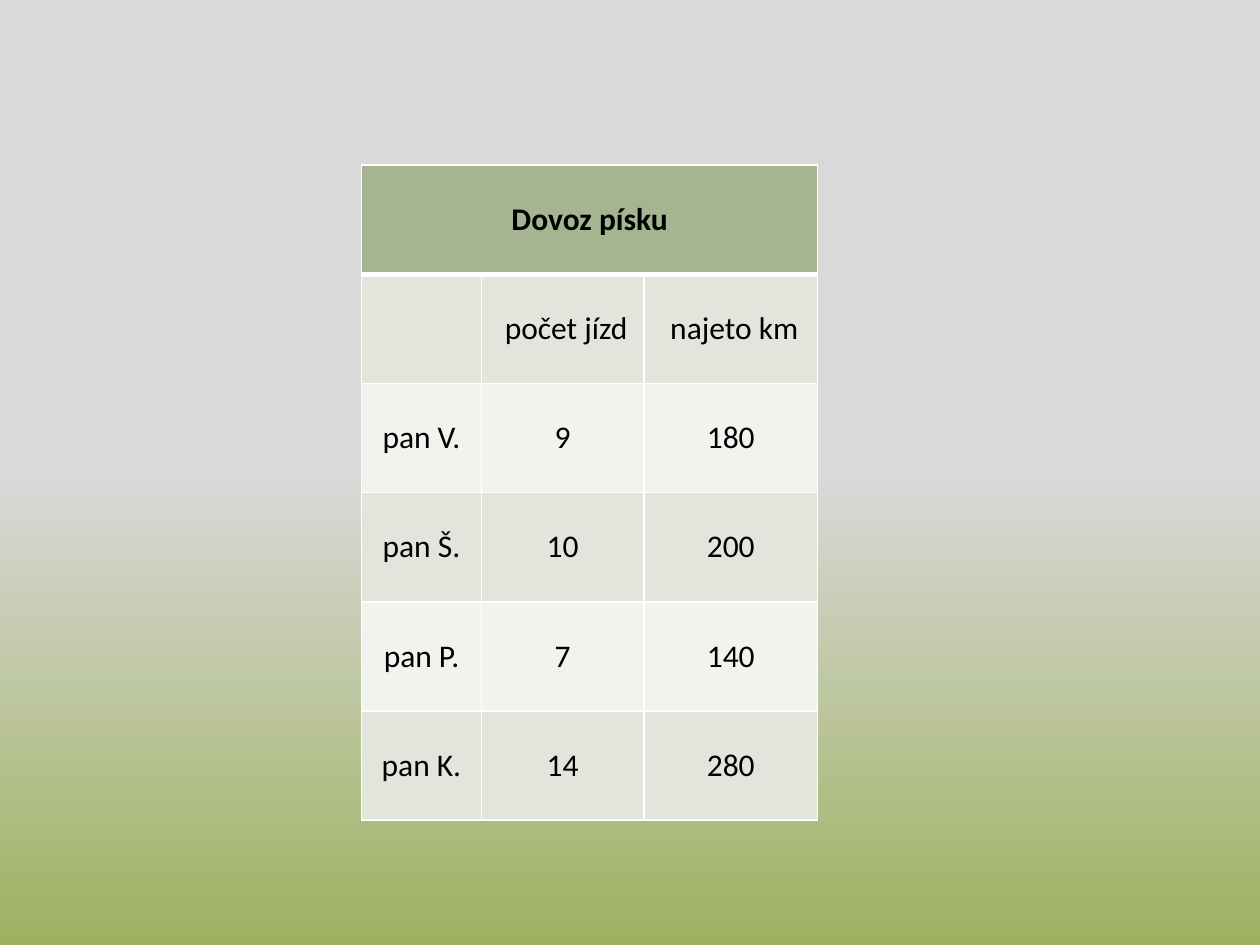
import dataclasses

import lxml.etree
import pptx
import pptx.dml.color
import pptx.enum.text
import pptx.oxml.ns
import pptx.util

Pt = pptx.util.Pt
RGB = pptx.dml.color.RGBColor.from_string


@dataclasses.dataclass(frozen=True)
class Theme:
    font: str = "Calibri"
    size: int = 18
    text: str = "000000"
    heading: str = "A5B592"
    bands: tuple = ("E1E5DC", "F0F3EE")
    border: str = "FFFFFF"
    thin: int = 1
    thick: int = 3
    sky: str = "D9D9D9"
    grass: str = "9EB160"


THEME = Theme()
HEADING = "Dovoz písku"
TRIPS = [
    ("", " počet jízd", " najeto km"),
    ("pan V.", "9", "180"),
    ("pan Š.", "10", "200"),
    ("pan P.", "7", "140"),
    ("pan K.", "14", "280"),
]
LEFT, TOP = 206.64, 94.32
COLUMN_WIDTHS = (68.4, 92.88, 99.36)
ROW_HEIGHT = 62.4


def paint_background(slide):
    fill = slide.background.fill
    fill.gradient()
    fill.gradient_angle = 270
    stops = ((0.5, THEME.sky), (1, THEME.grass))
    for stop, (position, color) in zip(fill.gradient_stops, stops):
        stop.position = position
        stop.color.rgb = RGB(color)


def draw_borders(cell, top, bottom):
    properties = cell._tc.get_or_add_tcPr()
    widths = {"lnL": THEME.thin, "lnR": THEME.thin, "lnT": top, "lnB": bottom}
    qn = pptx.oxml.ns.qn
    for index, (side, width) in enumerate(widths.items()):
        line = lxml.etree.Element(qn(f"a:{side}"), w=str(Pt(width)))
        solid = lxml.etree.SubElement(line, qn("a:solidFill"))
        lxml.etree.SubElement(solid, qn("a:srgbClr"), val=THEME.border)
        properties.insert(index, line)


def fill_cell(cell, text, color, bold=False):
    cell.fill.solid()
    cell.fill.fore_color.rgb = RGB(color)
    cell.vertical_anchor = pptx.enum.text.MSO_ANCHOR.MIDDLE
    cell.text_frame.text = text
    paragraph = cell.text_frame.paragraphs[0]
    paragraph.alignment = pptx.enum.text.PP_ALIGN.CENTER
    font = paragraph.font
    if paragraph.runs:
        font = paragraph.runs[0].font
    font.name = THEME.font
    font.size = Pt(THEME.size)
    font.bold = bold
    font.color.rgb = RGB(THEME.text)


def add_trip_table(slide):
    row_count = len(TRIPS) + 1
    table = slide.shapes.add_table(
        row_count, len(COLUMN_WIDTHS), Pt(LEFT), Pt(TOP),
        Pt(sum(COLUMN_WIDTHS)), Pt(ROW_HEIGHT * row_count),
    ).table
    for column, width in zip(table.columns, COLUMN_WIDTHS):
        column.width = Pt(width)
    for row in table.rows:
        row.height = Pt(ROW_HEIGHT)

    heading = table.cell(0, 0)
    heading.merge(table.cell(0, len(COLUMN_WIDTHS) - 1))
    fill_cell(heading, HEADING, THEME.heading, bold=True)
    for cell in table.rows[0].cells:
        draw_borders(cell, THEME.thin, THEME.thick)

    for index, trip in enumerate(TRIPS):
        top = THEME.thin if index else THEME.thick
        for cell, text in zip(table.rows[index + 1].cells, trip):
            fill_cell(cell, text, THEME.bands[index % 2])
            draw_borders(cell, top, THEME.thin)


def main():
    presentation = pptx.Presentation()
    presentation.slide_width = Pt(720)
    presentation.slide_height = Pt(540)
    slide = presentation.slides.add_slide(presentation.slide_layouts[6])
    paint_background(slide)
    add_trip_table(slide)
    presentation.save("out.pptx")


if __name__ == "__main__":
    main()
